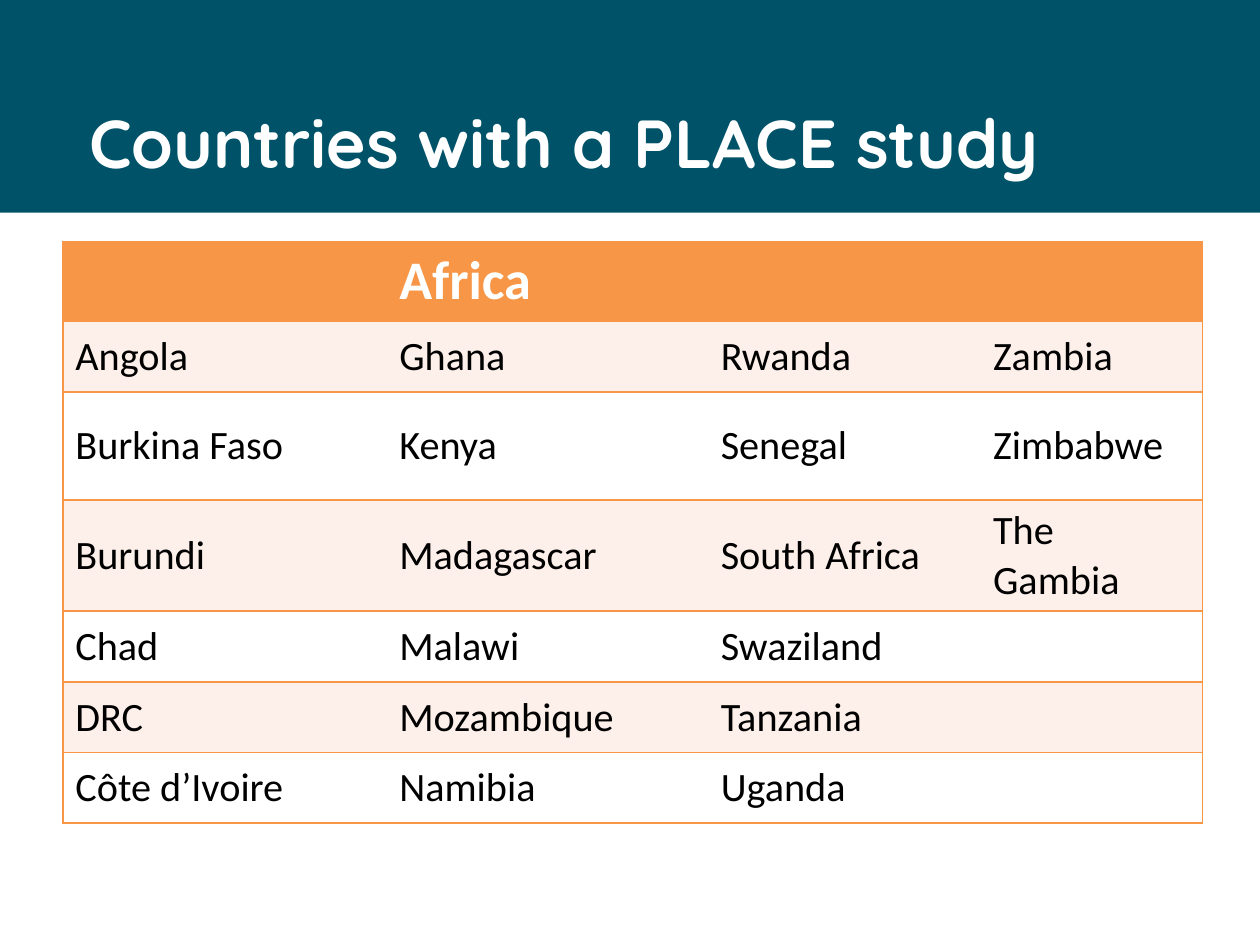
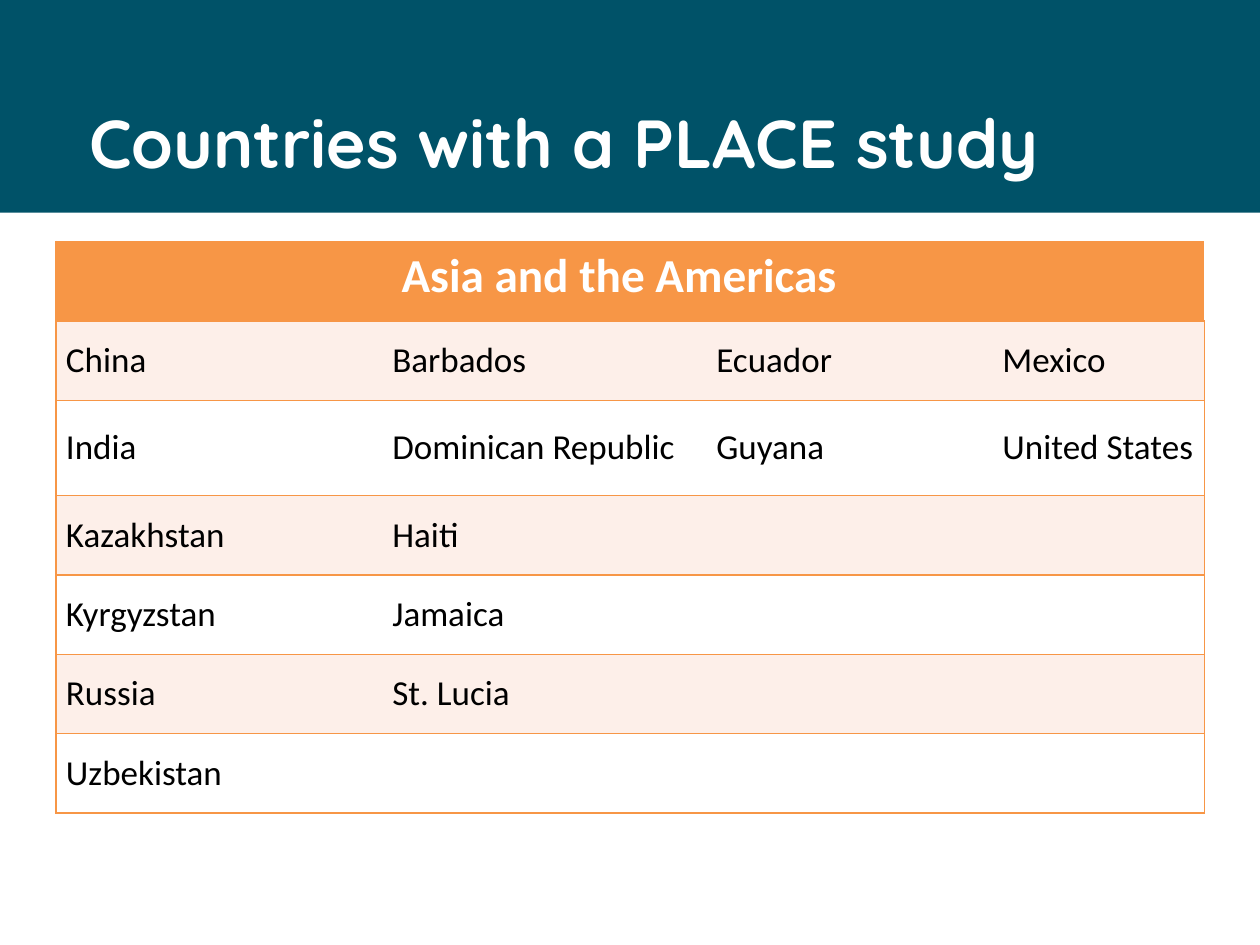
from dataclasses import dataclass

from lxml import etree
from pptx import Presentation
from pptx import util as u
from pptx.dml import color
from pptx.enum import shapes, text
from pptx.oxml import ns

TEAL, ORANGE, BLUSH = "005268", "F79646", "FDEFE9"
WHITE, BLACK = "FFFFFF", "000000"
TITLE_FONT, BODY_FONT = "Quicksand", "Calibri"
TITLE = "Countries with a PLACE study"
SLIDE_WIDTH, SLIDE_HEIGHT = u.Cm(25.4), u.Cm(19.05)
TABLE_TOP = u.Cm(4.87)


@dataclass(frozen=True)
class Region:
    """Contents and measures (in cm) of one table of countries."""
    heading: str
    heading_column: int
    heading_size: float
    heading_spans: bool
    heading_right: float
    countries: tuple
    size: float
    left: float
    widths: tuple
    heights: tuple
    side_inset: float
    top_inset: float


AFRICA = Region(
    heading="Africa", heading_column=1, heading_size=31,
    heading_spans=False, heading_right=0.25,
    countries=(
        ("Angola", "Ghana", "Rwanda", "Zambia"),
        ("Burkina Faso", "Kenya", "Senegal", "Zimbabwe"),
        ("Burundi", "Madagascar", "South Africa", "The\vGambia"),
        ("Chad", "Malawi", "Swaziland", ""),
        ("DRC", "Mozambique", "Tanzania", ""),
        ("Côte d’Ivoire", "Namibia", "Uganda", ""),
    ),
    size=23, left=1.27, widths=(6.53, 6.48, 5.49, 4.47),
    heights=(1.6, 1.43, 2.18, 2.24, 1.43, 1.42, 1.42),
    side_inset=0.25, top_inset=0.13,
)
ASIA_AMERICAS = Region(
    heading="Asia and the Americas", heading_column=0, heading_size=27,
    heading_spans=True, heading_right=0.7,
    countries=(
        ("China", "Barbados", "Ecuador", "Mexico"),
        ("India", "Dominican Republic", "Guyana", "United States"),
        ("Kazakhstan", "Haiti", "", ""),
        ("Kyrgyzstan", "Jamaica", "", ""),
        ("Russia", "St. Lucia", "", ""),
        ("Uzbekistan", "", "", ""),
    ),
    size=20, left=1.13, widths=(6.58, 6.53, 5.77, 4.27),
    heights=(1.6, 1.6, 1.92, 1.6, 1.6, 1.6, 1.6),
    side_inset=0.2, top_inset=0.1,
)


def rgb(value: str) -> color.RGBColor:
    """Turn a hex string into a colour."""
    return color.RGBColor.from_string(value)


def write(frame, words: str, *, size: float, ink: str, font: str = BODY_FONT,
          bold: bool = False, align=text.PP_ALIGN.LEFT) -> None:
    """Write one formatted paragraph into a text frame."""
    para = frame.paragraphs[0]
    para.text = words
    para.alignment = align
    for span in para.runs:
        span.font.name = font
        span.font.size = u.Pt(size)
        span.font.bold = bold
        span.font.color.rgb = rgb(ink)


def set_borders(cell, visible: str) -> None:
    """Rule the named sides of a cell and leave the other sides bare."""
    properties = cell._tc.get_or_add_tcPr()
    for side in "LRTB":
        line = etree.SubElement(properties, ns.qn(f"a:ln{side}"), w=str(u.Pt(1)))
        if side in visible:
            fill = etree.SubElement(line, ns.qn("a:solidFill"))
            etree.SubElement(fill, ns.qn("a:srgbClr"), val=ORANGE)
        else:
            etree.SubElement(line, ns.qn("a:noFill"))


def add_title_band(page) -> None:
    """Draw the teal band and the title that every slide shares."""
    band = page.shapes.add_shape(shapes.MSO_SHAPE.RECTANGLE,
                                 0, 0, SLIDE_WIDTH, u.Cm(4.29))
    band.shadow.inherit = False
    band.fill.solid()
    band.fill.fore_color.rgb = rgb(TEAL)
    band.line.fill.background()
    box = page.shapes.add_textbox(u.Cm(1.55), u.Cm(1.9), u.Cm(21.9), u.Cm(2.8))
    box.text_frame.word_wrap = True
    write(box.text_frame, TITLE, size=38.8, ink=WHITE, font=TITLE_FONT, bold=True)


def style_cell(cell, region: Region, row: int, column: int) -> None:
    """Give a cell its insets, borders and banded fill."""
    cell.margin_left = cell.margin_right = u.Cm(region.side_inset)
    cell.margin_top = cell.margin_bottom = u.Cm(region.top_inset)
    if row:
        cell.vertical_anchor = text.MSO_ANCHOR.MIDDLE
    outer = {0: "L", len(region.widths) - 1: "R"}
    set_borders(cell, "TB" + outer.get(column, ""))
    cell.fill.solid()
    band = BLUSH if row % 2 else WHITE
    cell.fill.fore_color.rgb = rgb(band if row else ORANGE)


def add_heading(table, region: Region) -> None:
    """Write the region's name in the top row."""
    cell = table.cell(0, region.heading_column)
    align = text.PP_ALIGN.LEFT
    if region.heading_spans:
        cell.merge(table.cell(0, len(region.widths) - 1))
        align = text.PP_ALIGN.CENTER
    cell.margin_left, cell.margin_right = u.Cm(0.25), u.Cm(region.heading_right)
    cell.margin_top = cell.margin_bottom = u.Cm(0.13)
    write(cell.text_frame, region.heading, size=region.heading_size,
          ink=WHITE, bold=True, align=align)


def add_region_table(page, region: Region) -> None:
    """Add the table of countries for one region."""
    table = page.shapes.add_table(
        len(region.heights), len(region.widths), u.Cm(region.left), TABLE_TOP,
        u.Cm(sum(region.widths)), u.Cm(sum(region.heights))).table
    table.first_row = table.horz_banding = False
    for column, width in zip(table.columns, region.widths):
        column.width = u.Cm(width)
    for row, height in zip(table.rows, region.heights):
        row.height = u.Cm(height)
    for row in range(len(region.heights)):
        for column in range(len(region.widths)):
            style_cell(table.cell(row, column), region, row, column)
    add_heading(table, region)
    for row, names in enumerate(region.countries, start=1):
        for column, name in enumerate(names):
            if name:
                write(table.cell(row, column).text_frame, name,
                      size=region.size, ink=BLACK)


def main() -> None:
    """Build one slide per region and save the deck."""
    deck = Presentation()
    deck.slide_width, deck.slide_height = SLIDE_WIDTH, SLIDE_HEIGHT
    for region in (AFRICA, ASIA_AMERICAS):
        page = deck.slides.add_slide(deck.slide_layouts[6])
        add_title_band(page)
        add_region_table(page, region)
    deck.save("out.pptx")


if __name__ == "__main__":
    main()
